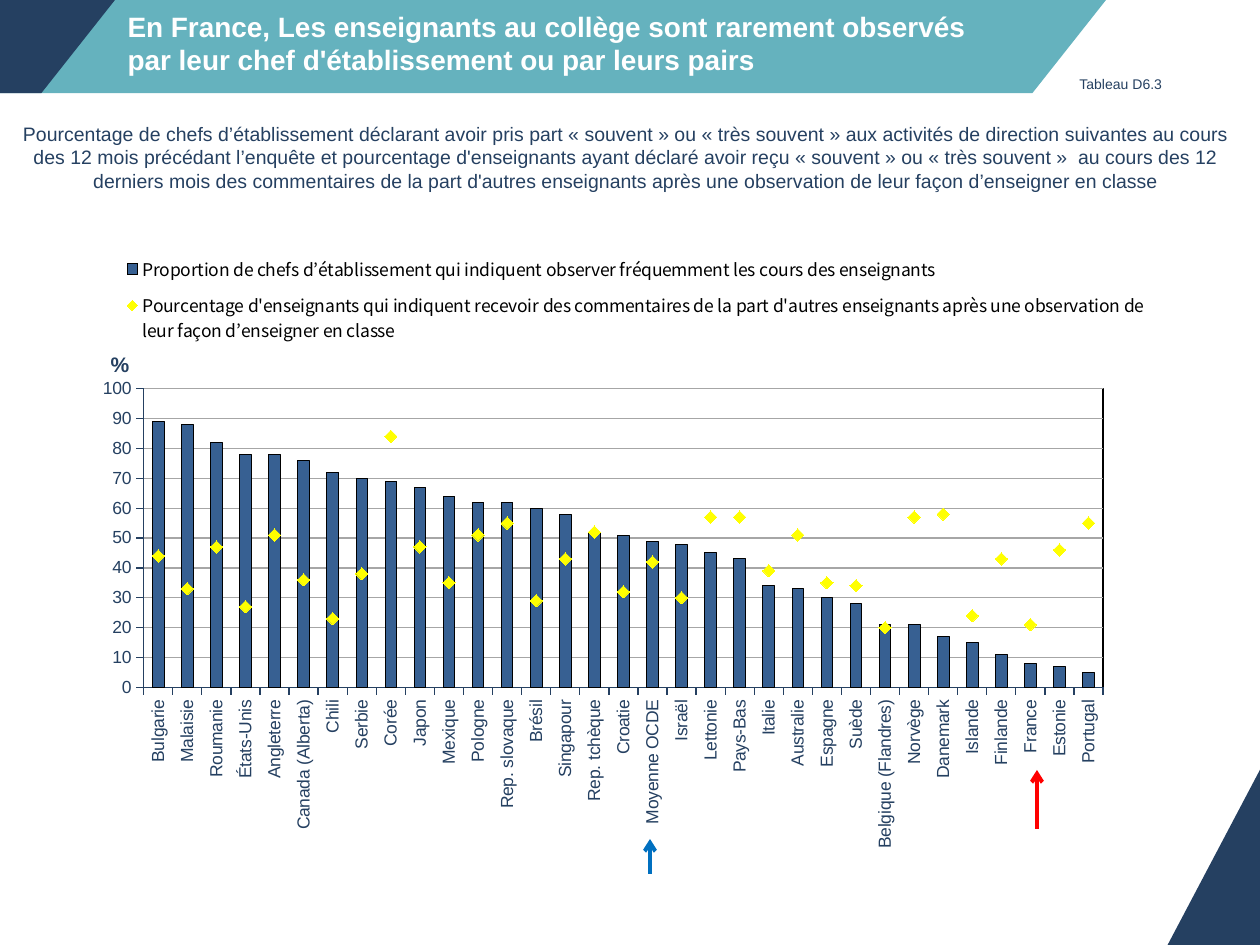
from lxml import etree
from pptx import Presentation
from pptx import util as u
from pptx.chart.data import CategoryChartData
from pptx.dml.color import RGBColor
from pptx.enum import chart as charts, shapes, text
from pptx.oxml import parse_xml
from pptx.oxml.ns import nsdecls, qn

NAVY, TEAL, BAR, YELLOW, GRID = "254061", "65B2BE", "376092", "FFFF00", "A6A6A6"
TITLE = ("En France, Les enseignants au collège sont rarement observés "
         "par leur chef d'établissement ou par leurs pairs")
SUBTITLE = (
    "Pourcentage de chefs d’établissement déclarant avoir pris part « souvent » ou "
    "« très souvent » aux activités de direction suivantes au cours des 12 mois "
    "précédant l’enquête et pourcentage d'enseignants ayant déclaré avoir reçu "
    "« souvent » ou « très souvent »  au cours des 12 derniers mois des commentaires "
    "de la part d'autres enseignants après une observation de leur façon d’enseigner "
    "en classe")
HEADS = ("Proportion de chefs d’établissement qui indiquent observer fréquemment "
         "les cours des enseignants")
TEACHERS = (
    "Pourcentage d'enseignants qui indiquent recevoir des commentaires de la part "
    "d'autres enseignants après une observation de leur façon d’enseigner en classe")
ROWS = [
    ("Bulgarie", 89, 44), ("Malaisie", 88, 33), ("Roumanie", 82, 47),
    ("États-Unis", 78, 27), ("Angleterre", 78, 51), ("Canada (Alberta)", 76, 36),
    ("Chili", 72, 23), ("Serbie", 70, 38), ("Corée", 69, 84), ("Japon", 67, 47),
    ("Mexique", 64, 35), ("Pologne", 62, 51), ("Rep. slovaque", 62, 55),
    ("Brésil", 60, 29), ("Singapour", 58, 43), ("Rep. tchèque", 52, 52),
    ("Croatie", 51, 32), ("Moyenne OCDE", 49, 42), ("Israël", 48, 30),
    ("Lettonie", 45, 57), ("Pays-Bas", 43, 57), ("Italie", 34, 39),
    ("Australie", 33, 51), ("Espagne", 30, 35), ("Suède", 28, 34),
    ("Belgique (Flandres)", 21, 20), ("Norvège", 21, 57), ("Danemark", 17, 58),
    ("Islande", 15, 24), ("Finlande", 11, 43), ("France", 8, 21),
    ("Estonie", 7, 46), ("Portugal", 5, 55),
]


def px(value):
    """Turn pixels into EMU."""
    return u.Emu(round(value * 914400 / 126))


def color(value):
    """Turn a hex string into a colour."""
    return RGBColor.from_string(value)


def set_font(font, size, fill, name="Arial", bold=False):
    """Format a font."""
    font.size, font.name, font.bold = u.Pt(size), name, bold
    font.color.rgb = color(fill)


def set_line(line, fill, width):
    """Format a line."""
    line.color.rgb, line.width = color(fill), u.Pt(width)


def add_block(page, kind, box, fill, slant=None):
    """Add a plain filled shape."""
    shape = page.shapes.add_shape(kind, *map(px, box))
    shape.shadow.inherit = False
    shape.fill.solid()
    shape.fill.fore_color.rgb = color(fill)
    shape.line.fill.background()
    if slant:
        shape.adjustments[0] = slant


def add_header(page, box):
    """Draw the slanted bands and put the title on them."""
    left, top, width, height = box
    band = shapes.MSO_SHAPE.PARALLELOGRAM
    add_block(page, band, (left, top, width, height), TEAL, 0.79)
    add_block(page, band, (left + 1, top, 188, height), NAVY, 0.79)
    title = page.shapes.title
    page.shapes._spTree.append(title._element)
    title.left, title.top, title.width, title.height = map(
        px, (left + 189, top, 903, height - 7))
    frame = title.text_frame
    frame.text, frame.word_wrap = TITLE, True
    frame.vertical_anchor = text.MSO_ANCHOR.MIDDLE
    para = frame.paragraphs[0]
    para.alignment = text.PP_ALIGN.LEFT
    set_font(para.font, 16, "FFFFFF", bold=True)


def add_text(page, box, words, size, align):
    """Add a wrapped navy text box."""
    frame = page.shapes.add_textbox(*map(px, box)).text_frame
    frame.word_wrap = True
    para = frame.paragraphs[0]
    para.text, para.alignment = words, align
    para.space_before = u.Pt(size * 0.2)
    set_font(para.font, size, NAVY)


def add_arrow(page, start, end, fill):
    """Add an arrow that points at its end."""
    line = page.shapes.add_connector(
        shapes.MSO_CONNECTOR.STRAIGHT, *map(px, start + end))
    set_line(line.line, fill, 2.25)
    props = line._element.spPr
    etree.SubElement(props.find(qn("a:ln")), qn("a:tailEnd"), type="arrow")
    etree.SubElement(props, qn("a:effectLst"))


def set_layout(parent, index, inner=False, **edges):
    """Give a chart part a fixed place, in fractions of the chart."""
    for old in parent.findall(qn("c:layout")):
        parent.remove(old)
    layout = etree.Element(qn("c:layout"))
    manual = etree.SubElement(layout, qn("c:manualLayout"))
    if inner:
        etree.SubElement(manual, qn("c:layoutTarget"), val="inner")
    for axis in "xy":
        etree.SubElement(manual, qn(f"c:{axis}Mode"), val="edge")
    for edge, value in edges.items():
        etree.SubElement(manual, qn(f"c:{edge}"), val=str(value))
    parent.insert(index, layout)


def move_to_lines(chart):
    """Turn the last bar series into a line series on the same axes."""
    bars = chart._chartSpace.find(".//" + qn("c:barChart"))
    series = bars.findall(qn("c:ser"))[-1]
    for flag in series.findall(qn("c:invertIfNegative")):
        series.remove(flag)
    lines = parse_xml(
        f'<c:lineChart {nsdecls("c")}><c:grouping val="standard"/>'
        '<c:varyColors val="0"/><c:marker val="1"/></c:lineChart>')
    lines.insert(2, series)
    for axis in bars.findall(qn("c:axId")):
        etree.SubElement(lines, qn("c:axId"), val=axis.get("val"))
    bars.addnext(lines)
    return chart.plots[1].series[0]


def format_axes(chart):
    """Format both axes and the axis title."""
    for axis in (chart.category_axis, chart.value_axis):
        set_font(axis.tick_labels.font, 10, NAVY)
        set_line(axis.format.line, NAVY, 0.75)
        axis.major_tick_mark = charts.XL_TICK_MARK.OUTSIDE
    labels = chart.category_axis._element.find(qn("c:txPr"))
    labels.find(qn("a:bodyPr")).set("rot", "-5400000")
    scale = chart.value_axis
    scale.minimum_scale, scale.maximum_scale, scale.major_unit = 0, 100, 10
    set_line(scale.major_gridlines.format.line, GRID, 0.75)
    title = scale.axis_title
    title.text_frame.text = "%"
    set_font(title.text_frame.paragraphs[0].font, 12, NAVY, bold=True)
    turn = title._element.find(".//" + qn("a:bodyPr"))
    turn.set("rot", "0")
    turn.set("vert", "horz")
    set_layout(title._element, 1, x=0.03, y=0.21)


def add_observation_chart(page, box):
    """Add the columns with diamond markers over them."""
    names, heads, teachers = zip(*ROWS)
    data = CategoryChartData()
    data.categories = names
    data.add_series(HEADS, heads)
    data.add_series(TEACHERS, teachers)
    chart = page.shapes.add_chart(
        charts.XL_CHART_TYPE.COLUMN_CLUSTERED, *map(px, box), data).chart
    chart.has_title = False
    set_font(chart.font, 10, "000000", "Noto Sans CJK KR")
    diamonds = move_to_lines(chart)
    plot = chart.plots[0]
    plot.gap_width, plot.vary_by_categories = 150, False
    columns = plot.series[0].format
    columns.fill.solid()
    columns.fill.fore_color.rgb = color(BAR)
    set_line(columns.line, "000000", 0.5)
    diamonds.smooth = False
    diamonds.format.line.fill.background()
    marker = diamonds.marker
    marker.style, marker.size = charts.XL_MARKER_STYLE.DIAMOND, 7
    marker.format.fill.solid()
    marker.format.fill.fore_color.rgb = color(YELLOW)
    marker.format.line.color.rgb = color(YELLOW)
    format_axes(chart)
    chart.has_legend = True
    chart.legend.include_in_layout = False
    set_layout(chart.legend._element, 1, x=0.04, y=0.06, w=0.95, h=0.16)
    area = chart._chartSpace.find(".//" + qn("c:plotArea"))
    set_layout(area, 0, True, x=0.064, y=0.27, w=0.88, h=0.437)
    area.append(parse_xml(
        f'<c:spPr {nsdecls("c", "a")}><a:noFill/><a:ln w="9525"><a:solidFill>'
        '<a:srgbClr val="000000"/></a:solidFill></a:ln></c:spPr>'))


def main():
    """Build the slide and save the deck."""
    deck = Presentation()
    deck.slide_width, deck.slide_height = px(1260), px(945)
    page = deck.slides.add_slide(deck.slide_layouts[5])
    add_header(page, (-74, 0, 1180, 93))
    add_block(page, shapes.MSO_SHAPE.ISOSCELES_TRIANGLE, (1155, 731, 251, 238), NAVY)
    add_text(page, (1, 116, 1250, 79), SUBTITLE, 11.1, text.PP_ALIGN.CENTER)
    add_observation_chart(page, (74, 204, 1091, 684))
    add_text(page, (1067, 69, 139, 47), "Tableau D6.3", 8, text.PP_ALIGN.LEFT)
    add_arrow(page, (1037, 829), (1037, 770), "FF0000")
    add_arrow(page, (650, 874), (650, 839), "0070C0")
    deck.save("out.pptx")


if __name__ == "__main__":
    main()
